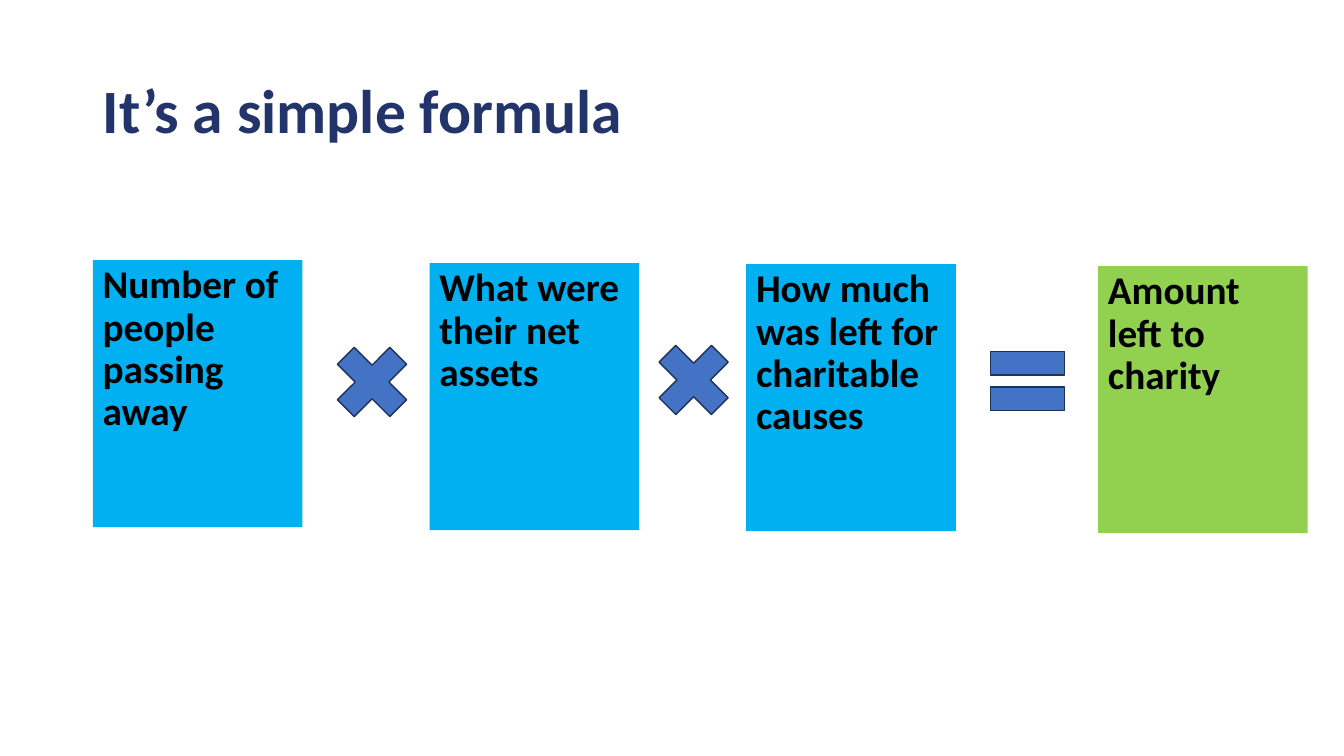
from dataclasses import dataclass

from pptx import Presentation
from pptx.dml.color import RGBColor
from pptx.enum.shapes import MSO_SHAPE
from pptx.enum.text import MSO_ANCHOR, PP_ALIGN
from pptx.shapes.base import BaseShape
from pptx.slide import Slide
from pptx.text.text import TextFrame
from pptx.util import Inches, Length, Pt

COLORS = {
    "title": "223469",
    "text": "000000",
    "factor": "00B0F0",
    "result": "92D050",
    "operator": "4472C4",
    "outline": "1E3256",
}
FONT = "Calibri"
CELL = Inches(0.1)  # the side of one square grid cell
MARGIN = 9.2
CARD_COLUMNS, CARD_ROWS = 20.8, 26.5
OPERATOR_CELLS = 10


@dataclass(frozen=True)
class Card:
    text: str
    column: float
    row: float
    color: str = "factor"


@dataclass(frozen=True)
class Operator:
    preset: MSO_SHAPE
    column: float
    row: float


CARDS = [
    Card("Number of people passing away", MARGIN, 25.8),
    Card("What were their net assets", 42.6, 26.1),
    Card("How much was left for charitable causes", 74, 26.2),
    Card("Amount left to charity", 108.9, 26.4, "result"),
]
OPERATORS = [
    Operator(MSO_SHAPE.MATH_MULTIPLY, 31.9, 32.9),
    Operator(MSO_SHAPE.MATH_MULTIPLY, 63.8, 32.7),
    Operator(MSO_SHAPE.MATH_EQUAL, 96.9, 32.8),
]


def color(name: str) -> RGBColor:
    return RGBColor.from_string(COLORS[name])


def cells(count: float) -> Length:
    return Length(round(count * CELL))


def write(frame: TextFrame, text: str, size: int, color_name: str, anchor: MSO_ANCHOR) -> None:
    frame.text = text
    frame.word_wrap = True
    frame.vertical_anchor = anchor
    para = frame.paragraphs[0]
    para.alignment = PP_ALIGN.LEFT
    para.line_spacing = 0.9
    font = para.runs[0].font
    font.name, font.size, font.bold = FONT, Pt(size), True
    font.color.rgb = color(color_name)


def add_filled(slide: Slide, preset: MSO_SHAPE, column: float, row: float,
               columns: float, rows: float, fill: str) -> BaseShape:
    shape = slide.shapes.add_shape(
        preset, cells(column), cells(row), cells(columns), cells(rows))
    shape.shadow.inherit = False
    shape.fill.solid()
    shape.fill.fore_color.rgb = color(fill)
    return shape


def add_title(slide: Slide, text: str) -> None:
    box = slide.shapes.add_textbox(cells(MARGIN), cells(4), cells(115), cells(14.5))
    write(box.text_frame, text, 44, "title", MSO_ANCHOR.MIDDLE)


def add_card(slide: Slide, card: Card) -> None:
    box = add_filled(slide, MSO_SHAPE.RECTANGLE, card.column, card.row,
                     CARD_COLUMNS, CARD_ROWS, card.color)
    box.line.fill.background()
    write(box.text_frame, card.text, 28, "text", MSO_ANCHOR.TOP)


def add_operator(slide: Slide, operator: Operator) -> None:
    sign = add_filled(slide, operator.preset, operator.column, operator.row,
                      OPERATOR_CELLS, OPERATOR_CELLS, "operator")
    sign.line.color.rgb = color("outline")
    sign.line.width = Pt(1)


def main() -> None:
    deck = Presentation()
    deck.slide_width, deck.slide_height = Inches(13.33), Inches(7.5)
    slide = deck.slides.add_slide(deck.slide_layouts[6])
    add_title(slide, "It’s a simple formula")
    for card in CARDS:
        add_card(slide, card)
    for operator in OPERATORS:
        add_operator(slide, operator)
    deck.save("out.pptx")


if __name__ == "__main__":
    main()
